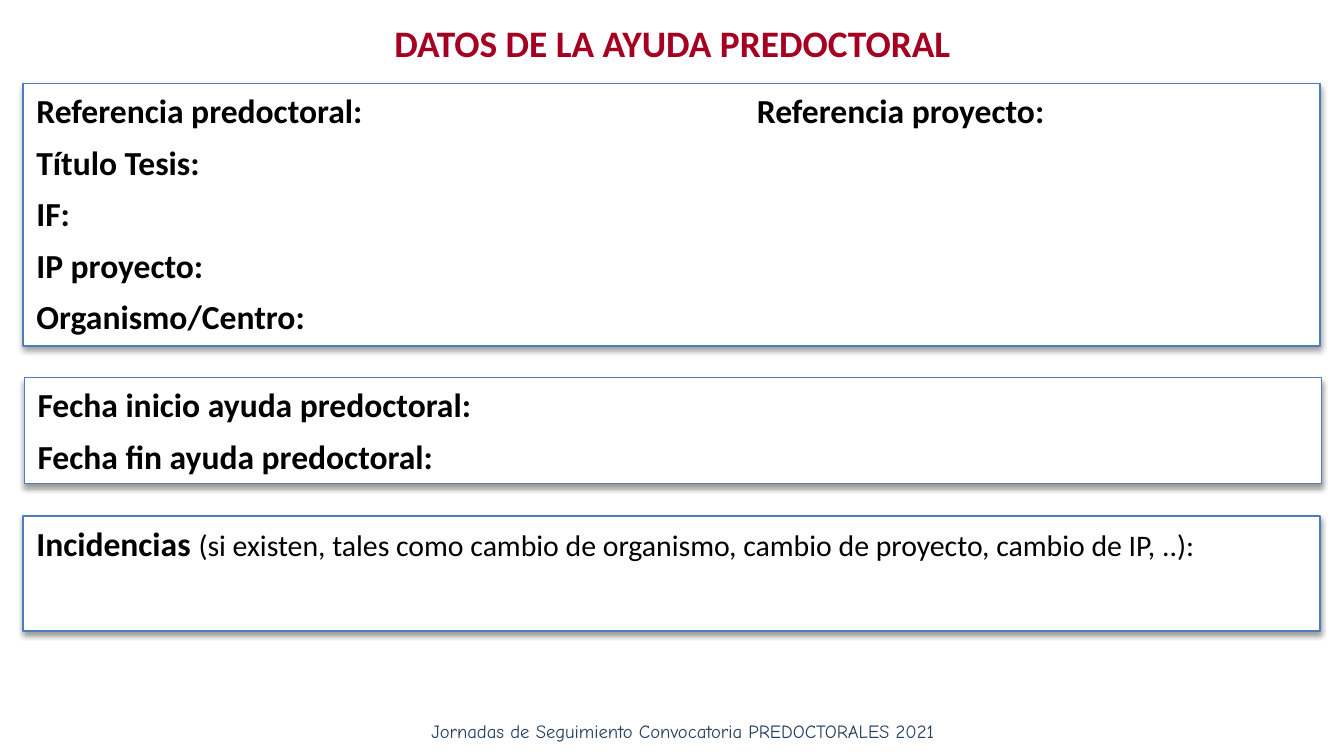
from lxml import etree
from pptx import Presentation
from pptx.dml.color import RGBColor
from pptx.enum import shapes, text
from pptx.oxml import parse_xml
from pptx.oxml.ns import nsdecls, qn
from pptx.util import Pt

BLACK, WHITE, BLUE, RED, NAVY = "000000", "FFFFFF", "4B7EBC", "A50021", "254061"


def color(code):
    return RGBColor.from_string(code)


def write(par, words, size=18, bold=True, tint=BLACK, font="Calibri"):
    run = par.add_run()
    run.text = words
    run.font.size, run.font.bold, run.font.name = Pt(size), bold, font
    run.font.color.rgb = color(tint)


def panel(slide, box):
    """White rectangle without line; returns the shape."""
    shape = slide.shapes.add_shape(shapes.MSO_SHAPE.RECTANGLE, *map(Pt, box))
    shape.shadow.inherit = False
    shape.fill.solid()
    shape.fill.fore_color.rgb = color(WHITE)
    shape.line.fill.background()
    frame = shape.text_frame
    frame.word_wrap = True
    frame.vertical_anchor = text.MSO_ANCHOR.TOP
    frame.paragraphs[0].alignment = text.PP_ALIGN.LEFT
    return shape


def shade(shape):
    """Soft shadow falling straight down."""
    effects = shape._element.spPr.find(qn("a:effectLst"))
    effects.append(parse_xml(
        f'<a:outerShdw {nsdecls("a")} blurRad="{Pt(3.1)}" dist="{Pt(1.6)}" '
        'dir="5400000" rotWithShape="0"><a:srgbClr val="000000">'
        '<a:alpha val="38000"/></a:srgbClr></a:outerShdw>'))


def add_tab(par, place):
    tabs = etree.SubElement(par._p.get_or_add_pPr(), qn("a:tabLst"))
    etree.SubElement(tabs, qn("a:tab"), pos=str(Pt(place)), algn="l")


def form(slide, box, lines, tab=None):
    """Outlined box; each line is a list of (words, format) parts."""
    shape = panel(slide, box)
    shape.line.color.rgb = color(BLUE)
    shape.line.width = Pt(0.75)
    shade(shape)
    frame = shape.text_frame
    for i, parts in enumerate(lines):
        par = frame.add_paragraph() if i else frame.paragraphs[0]
        par.alignment = text.PP_ALIGN.LEFT
        if i:
            par.space_before = Pt(6)
        elif tab:
            add_tab(par, tab)
        for words, look in parts:
            write(par, words, **look)


def title(slide, box):
    frame = slide.shapes.add_textbox(*map(Pt, box)).text_frame
    frame.word_wrap = True
    par = frame.paragraphs[0]
    par.alignment = text.PP_ALIGN.CENTER
    write(par, "DATOS DE LA AYUDA PREDOCTORAL", size=20, tint=RED)


def footer(slide, box):
    par = panel(slide, box).text_frame.paragraphs[0]
    write(par, "Jornadas de Seguimiento Convocatoria PREDOCTORALES 2021",
          size=10, bold=False, tint=NAVY, font="Comic Neue")


def main():
    deck = Presentation()
    deck.slide_width, deck.slide_height = Pt(720), Pt(405)
    slide = deck.slides.add_slide(deck.slide_layouts[6])

    footer(slide, (224, 382.3, 323.3, 19.4))
    # Grant details
    labels = ("Referencia predoctoral:\tReferencia proyecto:", "Título Tesis:",
              "IF:", "IP proyecto:", "Organismo/Centro:")
    form(slide, (12.4, 44.8, 694.8, 140.6), [[(t, {})] for t in labels], tab=386)
    # Dates
    dates = ("Fecha inicio ayuda predoctoral:", "Fecha fin ayuda predoctoral:")
    form(slide, (13, 202.3, 694.8, 56.9), [[(t, {})] for t in dates])
    title(slide, (113, 7.2, 494.6, 31.7))
    # Incidents
    hint = "(si existen, tales como cambio de organismo, cambio de proyecto, cambio de IP, ..):"
    form(slide, (12.4, 276.4, 694.8, 61.6),
         [[("Incidencias ", {}), (hint, {"size": 16, "bold": False})]])

    deck.save("out.pptx")


if __name__ == "__main__":
    main()
